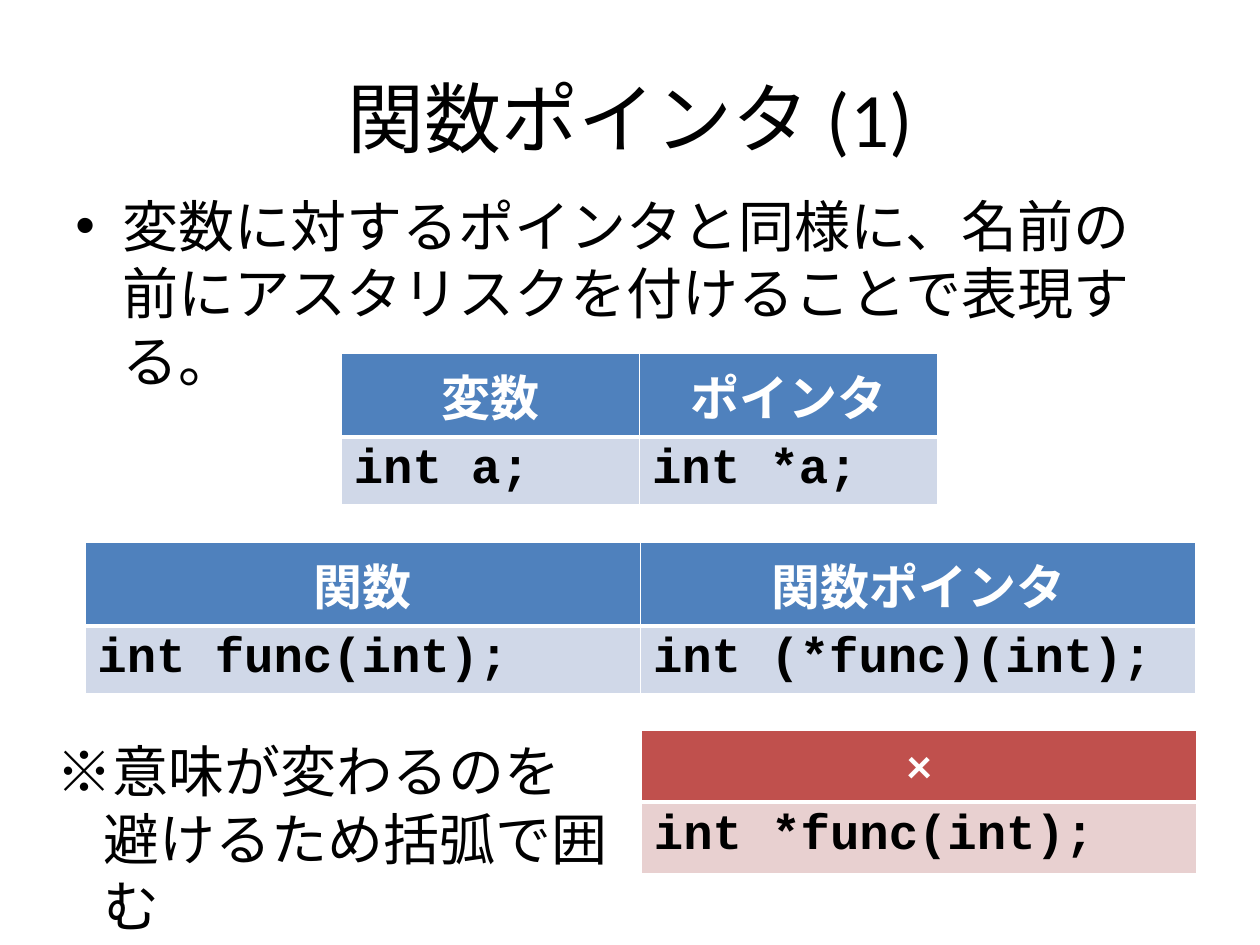
from lxml.etree import SubElement
from pptx import Presentation
from pptx.dml.color import RGBColor
from pptx.enum.lang import MSO_LANGUAGE_ID
from pptx.enum.text import MSO_ANCHOR, PP_ALIGN
from pptx.oxml import parse_xml
from pptx.oxml.ns import qn
from pptx.util import Pt

BLACK, WHITE = "000000", "FFFFFF"
BLUE, PALE_BLUE = "4F81BD", "D0D8E8"
RED, PALE_RED = "C0504D", "E8D0D0"
DRAWING_NS = "http://schemas.openxmlformats.org/drawingml/2006/main"


def color(value):
    return RGBColor.from_string(value)


class PointerSlide:
    """Holds the style and the current slide, and adds each kind of element."""

    body_font = "Calibri"
    code_font = "Courier New"
    title_size, text_size, table_size = 44, 32, 28
    row_height = 29.5
    indent = 27

    def __init__(self, deck):
        self.slide = deck.slides.add_slide(deck.slide_layouts[5])

    def add_text(self, paragraph, text, size, fill=BLACK, font=None, bold=False):
        run = paragraph.add_run()
        run.text = text
        run.font.size = Pt(size)
        run.font.name = font or self.body_font
        run.font.bold = bold
        run.font.color.rgb = color(fill)
        run.font.language_id = MSO_LANGUAGE_ID.JAPANESE

    def title(self, text, left, top, width, height):
        heading = self.slide.shapes.title
        heading.left, heading.top = Pt(left), Pt(top)
        heading.width, heading.height = Pt(width), Pt(height)
        heading.text_frame.vertical_anchor = MSO_ANCHOR.MIDDLE
        paragraph = heading.text_frame.paragraphs[0]
        paragraph.alignment = PP_ALIGN.CENTER
        self.add_text(paragraph, text, self.title_size)

    def hanging_text(self, text, left, top, width, height, bullet=None):
        box = self.slide.shapes.add_textbox(Pt(left), Pt(top), Pt(width), Pt(height))
        box.text_frame.word_wrap = True
        paragraph = box.text_frame.paragraphs[0]
        paragraph.space_before = Pt(self.text_size * 0.2)
        properties = paragraph._p.get_or_add_pPr()
        properties.set("marL", str(Pt(self.indent)))
        properties.set("indent", str(-Pt(self.indent)))
        if bullet:
            SubElement(properties, qn("a:buFont"), typeface="Arial")
            SubElement(properties, qn("a:buChar"), char=bullet)
        self.add_text(paragraph, text, self.text_size)

    def border(self, cell, **widths):
        properties = cell._tc.get_or_add_tcPr()
        for position, side in enumerate("LRTB"):
            line = parse_xml(
                f'<a:ln{side} xmlns:a="{DRAWING_NS}" w="{Pt(widths.get(side, 1))}">'
                f'<a:solidFill><a:srgbClr val="{WHITE}"/></a:solidFill></a:ln{side}>'
            )
            properties.insert(position, line)

    def code_table(self, columns, left, top, column_width, head_fill, code_fill):
        table = self.slide.shapes.add_table(
            2, len(columns), Pt(left), Pt(top),
            Pt(column_width * len(columns)), Pt(2 * self.row_height),
        ).table
        for index, (heading, code) in enumerate(columns):
            table.columns[index].width = Pt(column_width)
            head_cell, code_cell = table.cell(0, index), table.cell(1, index)
            for cell, fill in ((head_cell, head_fill), (code_cell, code_fill)):
                cell.fill.solid()
                cell.fill.fore_color.rgb = color(fill)
            self.border(head_cell, B=3)
            self.border(code_cell, T=3)
            head_paragraph = head_cell.text_frame.paragraphs[0]
            head_paragraph.alignment = PP_ALIGN.CENTER
            self.add_text(head_paragraph, heading, self.table_size, WHITE, bold=True)
            self.add_text(code_cell.text_frame.paragraphs[0], code, self.table_size,
                          font=self.code_font, bold=True)


def main():
    deck = Presentation()
    deck.slide_width, deck.slide_height = Pt(720), Pt(540)
    page = PointerSlide(deck)
    page.title("関数ポインタ (1)", 36, 21.6, 648, 90)
    page.code_table([("変数", "int a;"), ("ポインタ", "int *a;")],
                    195, 202, 170.5, BLUE, PALE_BLUE)
    page.code_table([("関数", "int func(int);"), ("関数ポインタ", "int (*func)(int);")],
                    48.5, 310, 317.5, BLUE, PALE_BLUE)
    page.hanging_text("変数に対するポインタと同様に、名前の前にアスタリスクを付けることで表現する。",
                      36, 106, 648, 85, bullet="•")
    page.hanging_text("※意味が変わるのを避けるため括弧で囲む", 25, 417.5, 330, 85)
    page.code_table([("×", "int *func(int);")], 366.5, 417.5, 317.5, RED, PALE_RED)
    deck.save("out.pptx")


if __name__ == "__main__":
    main()
